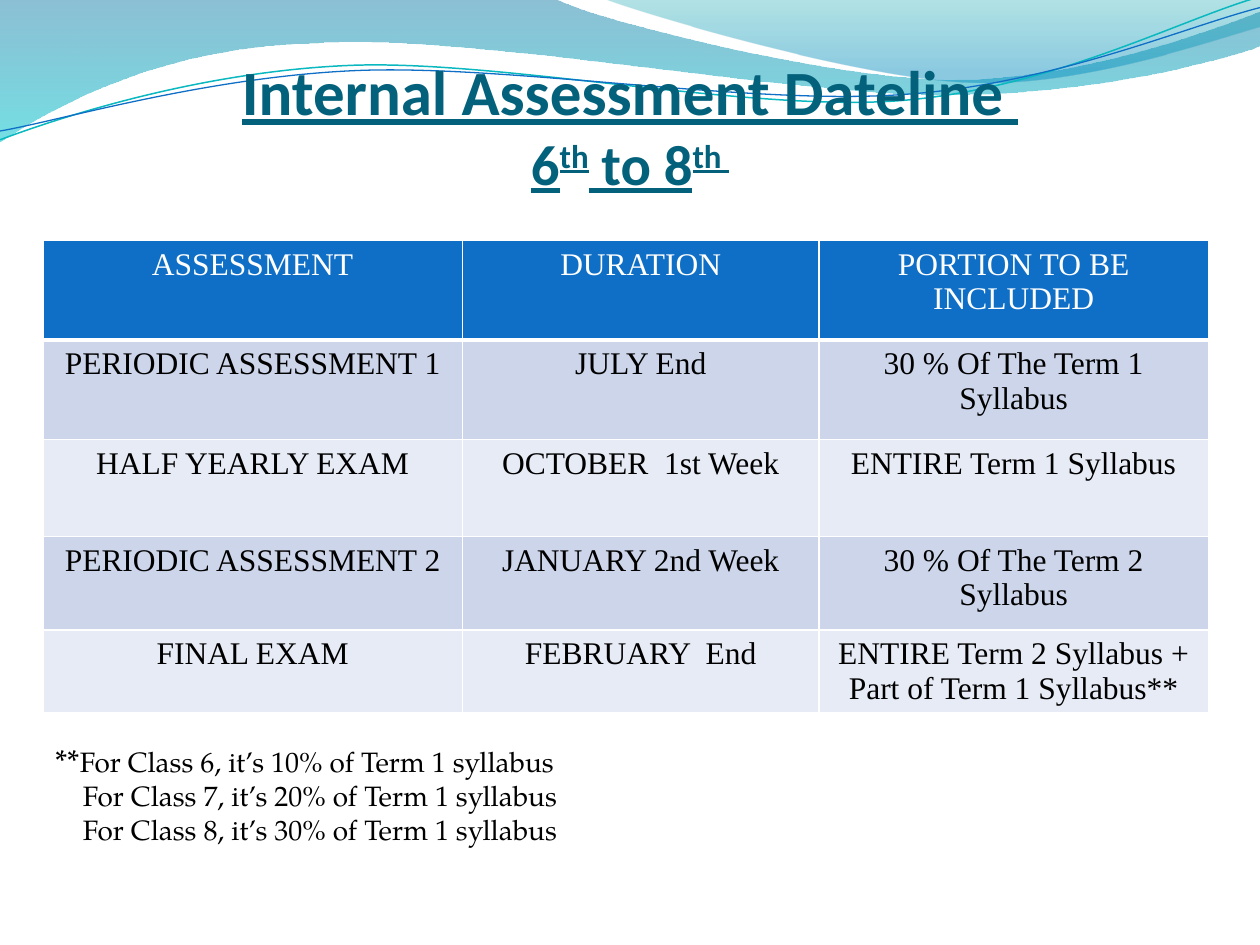
from dataclasses import dataclass
from math import cos, radians, sin

from lxml import etree
from pptx import Presentation
from pptx.dml.color import RGBColor
from pptx.enum.text import MSO_ANCHOR, MSO_AUTO_SIZE, PP_ALIGN
from pptx.oxml.ns import qn
from pptx.util import Inches, Pt

CENTER = PP_ALIGN.CENTER
BOTTOM = MSO_ANCHOR.BOTTOM
NO_FIT = MSO_AUTO_SIZE.NONE
GROW = MSO_AUTO_SIZE.SHAPE_TO_FIT_TEXT


@dataclass(frozen=True)
class Theme:
    """Colours, fonts and type sizes of the slide."""
    title: str = "04617B"
    header: str = "0F6FC6"
    bands: tuple = ("CCD5EA", "E7EBF5")
    white: str = "FFFFFF"
    black: str = "000000"
    teal: str = "0AB8BF"
    wave_back: tuple = ((0, "0074A1", 45), (1, "00C6CF", 55))
    wave_front: tuple = ((0, "00A1A9", 30), (0.8, "008BBF", 45))
    title_font: str = "Calibri"
    table_font: str = "Times New Roman"
    note_font: str = "TeX Gyre Pagella"
    title_size: float = 36
    subtitle_size: float = 32.4
    body_size: float = 18
    note_size: float = 16


THEME = Theme()
TILT = 357.3

BACK_WAVE = [
    (0, 0), (4.4, -0.01),
    (4.76, 0.17, 6.64, 0.63, 7.58, 0.63), (8.53, 0.63, 9.58, 0.26, 10, 0.09),
    (10.01, 0.36),
    (9.83, 0.44, 8.7, 0.76, 7.46, 0.75), (6.22, 0.75, 3.82, 0.28, 2.57, 0.34),
    (1.29, 0.36, 0.46, 0.83, -0.01, 1.13), (0, 0)]
FRONT_WAVE = [
    (4.79, -0.01),
    (5.09, 0.11, 6.82, 0.62, 7.69, 0.65), (8.56, 0.69, 9.61, 0.32, 10, 0.21),
    (10, 0), (4.79, -0.01)]
TEAL_CURVE = [
    (0, 1.11),
    (0.48, 0.93, 1.58, 0.57, 2.77, 0.52), (3.95, 0.47, 5.93, 0.89, 7.13, 0.8),
    (8.33, 0.71, 9.38, 0.15, 9.98, -0.02)]
BLUE_CURVE = [
    (0, 1.04),
    (0.47, 0.96, 1.64, 0.61, 2.83, 0.56), (4.03, 0.51, 5.97, 0.84, 7.17, 0.75),
    (8.36, 0.67, 9.41, 0.21, 10, 0.06)]

ROWS = [
    ("ASSESSMENT", "DURATION", "PORTION TO BE INCLUDED"),
    ("PERIODIC ASSESSMENT 1", "JULY End", "30 % Of The Term 1 Syllabus"),
    ("HALF YEARLY EXAM", "OCTOBER  1st Week", "ENTIRE Term 1 Syllabus"),
    ("PERIODIC ASSESSMENT 2", "JANUARY 2nd Week", "30 % Of The Term 2 Syllabus"),
    ("FINAL EXAM", "FEBRUARY  End",
     "ENTIRE Term 2 Syllabus + Part of Term 1 Syllabus**")]
COL_WIDTHS = (3.33, 2.83, 3.09)
ROW_HEIGHTS = (0.79, 0.79, 0.77, 0.74, 0.66)


def style_run(r, font, size, color):
    """Set the font, size and colour of a run."""
    r.font.name = font
    r.font.size = Pt(size)
    r.font.color.rgb = RGBColor.from_string(color)


def add_curve(s, segments, box, close, rotation=0):
    """Draw lines and cubic curves, given as seen on the slide, in a box."""
    left, top, width, height = box
    cx, cy, angle = left + width / 2, top + height / 2, radians(-rotation)

    def local(x, y):
        """Undo the rotation and measure from the corner of the box."""
        dx, dy = x - cx, y - cy
        return (Inches(dx * cos(angle) - dy * sin(angle) + width / 2),
                Inches(dx * sin(angle) + dy * cos(angle) + height / 2))

    outline = [[local(*seg[i:i + 2]) for i in range(0, len(seg), 2)]
               for seg in segments]
    builder = s.shapes.build_freeform(*outline[0][0], scale=1.0)
    builder.add_line_segments([seg[-1] for seg in outline[1:]], close=close)
    sp = builder.convert_to_shape()
    sp.left, sp.top, sp.width, sp.height = (Inches(v) for v in box)
    sp.rotation = rotation
    sp.shadow.inherit = False

    geometry = next(sp.element.iter(qn("a:path")))
    geometry.set("w", str(sp.width))
    geometry.set("h", str(sp.height))
    for step, points in zip(list(geometry), outline):
        if len(points) == 3:
            step.tag = qn("a:cubicBezTo")
        for pt in list(step):
            step.remove(pt)
        for x, y in points:
            etree.SubElement(step, qn("a:pt"), x=str(x), y=str(y))
    return sp


def add_wave(s, segments, box, stops):
    """Draw a closed wave with a see-through vertical gradient."""
    sp = add_curve(s, segments, box, True)
    sp.line.fill.background()
    sp.fill.gradient()
    sp.fill.gradient_angle = 270
    for stop, (position, color, _) in zip(sp.fill.gradient_stops, stops):
        stop.position = position
        stop.color.rgb = RGBColor.from_string(color)
    for clr, (_, _, opacity) in zip(sp.element.spPr.iter(qn("a:srgbClr")), stops):
        etree.SubElement(clr, qn("a:alpha"), val=str(opacity * 1000))


def add_thin_curve(s, segments, box, color, width):
    """Draw an open tilted curve."""
    sp = add_curve(s, segments, box, False, TILT)
    sp.fill.background()
    sp.line.color.rgb = RGBColor.from_string(color)
    sp.line.width = Pt(width)


def fill_title(s, left, top, width, height):
    """Place the two-line underlined title with raised ordinals."""
    sp = s.shapes.title
    sp.left, sp.top, sp.width, sp.height = left, top, width, height
    tf = sp.text_frame
    tf.word_wrap = True
    tf.auto_size = NO_FIT
    tf.vertical_anchor = BOTTOM
    tf.margin_left = tf.margin_right = tf.margin_bottom = 0
    tf.margin_top = Inches(0.05)
    p = tf.paragraphs[0]
    p.alignment = CENTER
    small = THEME.subtitle_size
    for text, size, raised in (
            ("Internal Assessment Dateline ", THEME.title_size, False),
            ("6", small, False), ("th", small, True),
            (" to 8", small, False), ("th ", small, True)):
        r = p.add_run()
        r.text = text
        style_run(r, THEME.title_font, size, THEME.title)
        r.font.bold = r.font.underline = True
        if raised:
            r.font._element.set("baseline", "30000")
        if size == THEME.title_size:
            p.add_line_break()


def set_borders(cell, row):
    """Give a cell white borders, thicker below the header row."""
    widths = {"a:lnL": 1, "a:lnR": 1,
              "a:lnT": 3 if row == 1 else 1, "a:lnB": 3 if row == 0 else 1}
    tcPr = cell._tc.get_or_add_tcPr()
    for i, (tag, width) in enumerate(widths.items()):
        ln = etree.Element(qn(tag), w=str(Pt(width)))
        fill = etree.SubElement(ln, qn("a:solidFill"))
        etree.SubElement(fill, qn("a:srgbClr"), val=THEME.white)
        tcPr.insert(i, ln)


def add_schedule(s, left, top, width, height):
    """Add the table of assessments."""
    table = s.shapes.add_table(len(ROWS), len(COL_WIDTHS),
                               left, top, width, height).table
    for col, w in zip(table.columns, COL_WIDTHS):
        col.width = Inches(w)
    for i, (row, h, texts) in enumerate(zip(table.rows, ROW_HEIGHTS, ROWS)):
        row.height = Inches(h)
        fill = THEME.bands[(i - 1) % 2] if i else THEME.header
        for cell, text in zip(row.cells, texts):
            cell.fill.solid()
            cell.fill.fore_color.rgb = RGBColor.from_string(fill)
            set_borders(cell, i)
            p = cell.text_frame.paragraphs[0]
            p.text = text
            p.alignment = CENTER
            style_run(p.runs[0], THEME.table_font, THEME.body_size,
                      THEME.black if i else THEME.white)


def add_notes(s, left, top, width, height):
    """Add the footnote lines, the later ones aligned after the asterisks."""
    tf = s.shapes.add_textbox(left, top, width, height).text_frame
    tf.word_wrap = True
    tf.auto_size = GROW
    for i, (grade, share) in enumerate(((6, 10), (7, 20), (8, 30))):
        p = tf.add_paragraph() if i else tf.paragraphs[0]
        if i:
            p._p.get_or_add_pPr().set("marL", str(Inches(0.22)))
        else:
            r = p.add_run()
            r.text = "**"
            style_run(r, THEME.note_font, THEME.body_size, THEME.black)
        r = p.add_run()
        r.text = f"For Class {grade}, it’s {share}% of Term 1 syllabus"
        style_run(r, THEME.note_font, THEME.note_size, THEME.black)


prs = Presentation()
prs.slide_width, prs.slide_height = Inches(10), Inches(7.5)
s = prs.slides.add_slide(prs.slide_layouts[5])
add_wave(s, BACK_WAVE, (-0.01, -0.01, 10.02, 1.14), THEME.wave_back)
add_wave(s, FRONT_WAVE, (4.79, -0.01, 5.21, 0.7), THEME.wave_front)
add_thin_curve(s, TEAL_CURVE, (-0.02, 0.22, 10.02, 0.71), THEME.teal, 0.85)
add_thin_curve(s, BLUE_CURVE, (-0.02, 0.3, 10.03, 0.58), THEME.header, 0.75)
fill_title(s, Inches(0.5), Inches(0.75), Inches(9), Inches(0.81))
s.shapes._spTree.append(s.shapes.title._element)
add_schedule(s, Inches(0.34), Inches(1.91), Inches(9.25), Inches(3.75))
add_notes(s, Inches(0.34), Inches(5.83), Inches(7.83), Inches(1.25))
prs.save("out.pptx")
